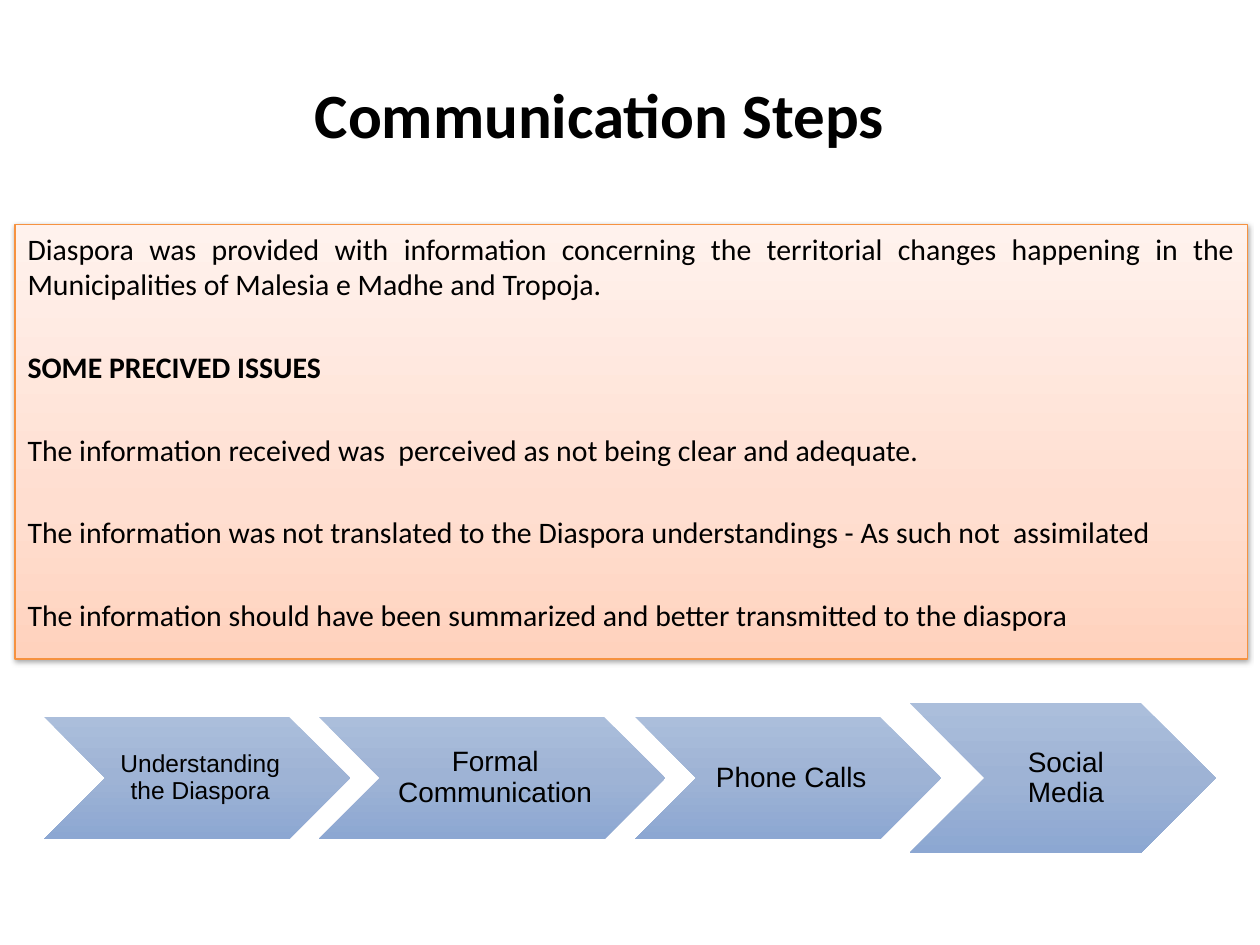
"""Build the Communication Steps slide."""
from lxml import etree
from pptx import Presentation
from pptx.dml.color import RGBColor
from pptx.enum.shapes import MSO_SHAPE
from pptx.enum.text import MSO_ANCHOR, PP_ALIGN
from pptx.oxml.ns import qn
from pptx.util import Inches, Pt

CHEVRON, RECT = MSO_SHAPE.CHEVRON, MSO_SHAPE.RECTANGLE
TOP, MIDDLE, BOTTOM = MSO_ANCHOR.TOP, MSO_ANCHOR.MIDDLE, MSO_ANCHOR.BOTTOM
LEFT, CENTER, JUSTIFY = PP_ALIGN.LEFT, PP_ALIGN.CENTER, PP_ALIGN.JUSTIFY

BLACK = RGBColor(0x00, 0x00, 0x00)
ORANGE = RGBColor(0xF6, 0x92, 0x40)
BLUES = [(0, RGBColor(0xAB, 0xBE, 0xDB)), (50, RGBColor(0x9E, 0xB3, 0xD5)),
         (100, RGBColor(0x8C, 0xA7, 0xD2))]
PEACHES = [(0, RGBColor(0xFF, 0xD2, 0xBD)), (35, RGBColor(0xFF, 0xDE, 0xD0)),
           (100, RGBColor(0xFF, 0xF2, 0xED))]

ISSUES = [
    ("Diaspora was provided with information concerning the territorial changes "
     "happening in the Municipalities of Malesia e Madhe and Tropoja.", False),
    ("SOME PRECIVED ISSUES", True),
    ("The information received was  perceived as not being clear and adequate.", False),
    ("The information was not translated to the Diaspora understandings - "
     "As such not  assimilated", False),
    ("The information should have been summarized and better transmitted "
     "to the diaspora", False),
]
STEPS = [
    ("Understanding the Diaspora", 14, 0.35, 2.43, 0.97),
    ("Formal Communication", 16, 2.53, 2.75, 0.97),
    ("Phone Calls", 16, 5.04, 2.43, 0.97),
    ("Social Media", 16, 7.22, 2.43, 1.19),
]
STEP_MIDDLE = 6.175


def add_gradient_shape(kind, box, stops, angle):
    sp = s.shapes.add_shape(kind, *map(Inches, box))
    sp.shadow.inherit = False
    sp.fill.gradient()
    sp.fill.gradient_angle = angle
    gs_lst = sp._element.spPr.find(qn("a:gradFill")).find(qn("a:gsLst"))
    for gs in list(gs_lst):
        gs_lst.remove(gs)
    for pos, color in stops:
        gs = etree.SubElement(gs_lst, qn("a:gs"), pos=str(pos * 1000))
        etree.SubElement(gs, qn("a:srgbClr"), val=str(color))
    return sp


def write_text(sp, texts, font, paragraph, frame):
    tf = sp.text_frame
    tf.word_wrap = True
    for name, value in frame.items():
        setattr(tf, name, value)
    for i, (text, bold) in enumerate(texts):
        p = tf.add_paragraph() if i else tf.paragraphs[0]
        for name, value in paragraph.items():
            setattr(p, name, value)
        if i == 0:
            p.space_before = Pt(0)
        r = p.add_run()
        r.text = text
        r.font.bold = bold
        r.font.color.rgb = BLACK
        for name, value in font.items():
            setattr(r.font, name, value)


prs = Presentation()
prs.slide_width, prs.slide_height = Inches(10), Inches(7.5)
s = prs.slides.add_slide(prs.slide_layouts[6])

title = s.shapes.add_textbox(Inches(2.4), Inches(-0.02), Inches(5.47), Inches(1.27))
write_text(title, [("Communication Steps", True)],
           {"name": "Calibri", "size": Pt(36)},
           {"alignment": LEFT}, {"vertical_anchor": BOTTOM})

for text, size, left, width, height in STEPS:
    top = STEP_MIDDLE - height / 2
    sp = add_gradient_shape(CHEVRON, (left, top, width, height), BLUES, 270)
    sp.line.fill.background()
    label = s.shapes.add_textbox(Inches(left + height / 2), Inches(top),
                                 Inches(width - height), Inches(height))
    write_text(label, [(text, False)],
               {"name": "Arial", "size": Pt(size)},
               {"alignment": CENTER, "line_spacing": 0.9},
               {"vertical_anchor": MIDDLE, "margin_left": Inches(0.07),
                "margin_right": Inches(0.02), "margin_top": Inches(0.02),
                "margin_bottom": Inches(0.02)})

panel = add_gradient_shape(RECT, (0.12, 1.78, 9.78, 3.45), PEACHES, 90)
panel.line.color.rgb = ORANGE
panel.line.width = Pt(0.75)
effects = panel._element.spPr.find(qn("a:effectLst"))
shadow = etree.SubElement(effects, qn("a:outerShdw"), blurRad=str(Pt(3.1)),
                          dist=str(Pt(1.6)), dir="5400000", rotWithShape="0")
shade = etree.SubElement(shadow, qn("a:srgbClr"), val=str(BLACK))
etree.SubElement(shade, qn("a:alpha"), val="38000")
write_text(panel, ISSUES, {"name": "Calibri", "size": Pt(17)},
           {"alignment": JUSTIFY, "space_before": Pt(26.8)},
           {"vertical_anchor": TOP})

prs.save("out.pptx")
